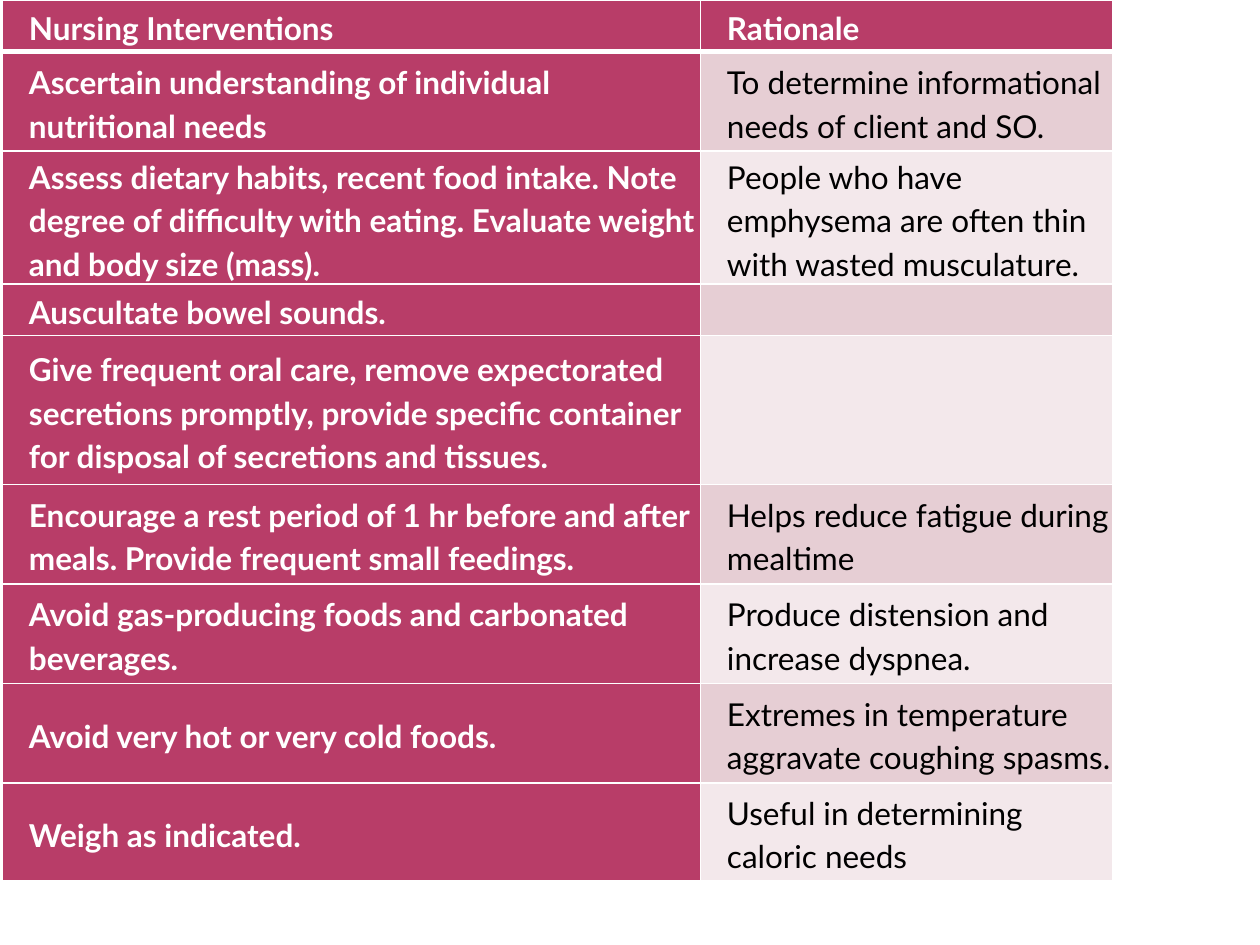
from dataclasses import dataclass, field

from lxml import etree
from pptx import Presentation
from pptx import util as u
from pptx.dml.color import RGBColor
from pptx.enum import text
from pptx.oxml import ns

COLORS = {
    "rose": "B83D68",
    "pink": "E6CED4",
    "blush": "F3E8EB",
    "white": "FFFFFF",
    "black": "000000",
}
COLUMN_WIDTHS = [5.54, 3.27]
ROW_HEIGHTS = [0.41, 0.79, 0.79, 0.41, 1.18, 0.79, 0.79, 0.79, 0.78]
CARE_PLAN = [
    ("Nursing Interventions", "Rationale"),
    ("Ascertain understanding of individual nutritional needs",
     "To determine informational needs of client and SO."),
    ("Assess dietary habits, recent food intake. Note degree of difficulty "
     "with eating. Evaluate weight and body size (mass).",
     "People who have emphysema are often thin with wasted musculature."),
    ("Auscultate bowel sounds.", ""),
    ("Give frequent oral care, remove expectorated secretions promptly, "
     "provide specific container for disposal of secretions and tissues.", ""),
    ("Encourage a rest period of 1 hr before and after meals. "
     "Provide frequent small feedings.",
     "Helps reduce fatigue during mealtime"),
    ("Avoid gas-producing foods and carbonated beverages.",
     "Produce distension and increase dyspnea."),
    ("Avoid very hot or very cold foods.",
     "Extremes in temperature aggravate coughing spasms."),
    ("Weigh as indicated.", "Useful in determining caloric needs"),
]


def write(frame, content, *, font, size, color, bold, indent, spacing):
    paragraph = frame.paragraphs[0]
    paragraph._p.get_or_add_pPr().set("marL", str(u.Inches(indent)))
    paragraph.line_spacing = spacing
    run = paragraph.add_run()
    run.text = content
    run.font.name = font
    run.font.size = u.Pt(size)
    run.font.bold = bold
    run.font.color.rgb = RGBColor.from_string(COLORS[color])


@dataclass
class CarePlanSlide:
    """Hold the style and the slide that receives the care plan."""

    slide: object
    inset: float = 0.01
    body: dict = field(default_factory=lambda: {
        "font": "Lato", "size": 18, "indent": 0.2, "spacing": 1.15})

    def borders(self, cell, **widths):
        properties = cell._tc.get_or_add_tcPr()
        for position, side in enumerate("LRTB"):
            line = etree.Element(ns.qn(f"a:ln{side}"),
                                 w=str(u.Pt(widths.get(side, 1))))
            fill = etree.SubElement(line, ns.qn("a:solidFill"))
            etree.SubElement(fill, ns.qn("a:srgbClr"), val=COLORS["white"])
            properties.insert(position, line)

    def cell(self, cell, content, *, fill, color, bold, **widths):
        cell.fill.solid()
        cell.fill.fore_color.rgb = RGBColor.from_string(COLORS[fill])
        cell.vertical_anchor = text.MSO_ANCHOR.MIDDLE
        cell.margin_left = cell.margin_right = u.Inches(self.inset)
        cell.margin_top = cell.margin_bottom = u.Inches(self.inset)
        self.borders(cell, **widths)
        if content:
            write(cell.text_frame, content, color=color, bold=bold, **self.body)

    def table(self, rows, left, top, widths, heights):
        table = self.slide.shapes.add_table(
            len(rows), len(widths), u.Inches(left), u.Inches(top),
            u.Inches(sum(widths)), u.Inches(sum(heights))).table
        for column, width in zip(table.columns, widths):
            column.width = u.Inches(width)
        for row, height in zip(table.rows, heights):
            row.height = u.Inches(height)
        for r, contents in enumerate(rows):
            rule = {0: {"B": 3}, 1: {"T": 3}}.get(r, {})
            for c, content in enumerate(contents):
                strong = r == 0 or c == 0
                band = "pink" if r % 2 else "blush"
                self.cell(table.cell(r, c), content,
                          fill="rose" if strong else band,
                          color="white" if strong else "black",
                          bold=strong, **rule)


def main():
    deck = Presentation()
    deck.slide_width, deck.slide_height = u.Inches(10), u.Inches(7.5)
    care_plan = CarePlanSlide(deck.slides.add_slide(deck.slide_layouts[6]))
    care_plan.table(CARE_PLAN, 0.02, 0, COLUMN_WIDTHS, ROW_HEIGHTS)
    deck.save("out.pptx")


if __name__ == "__main__":
    main()
